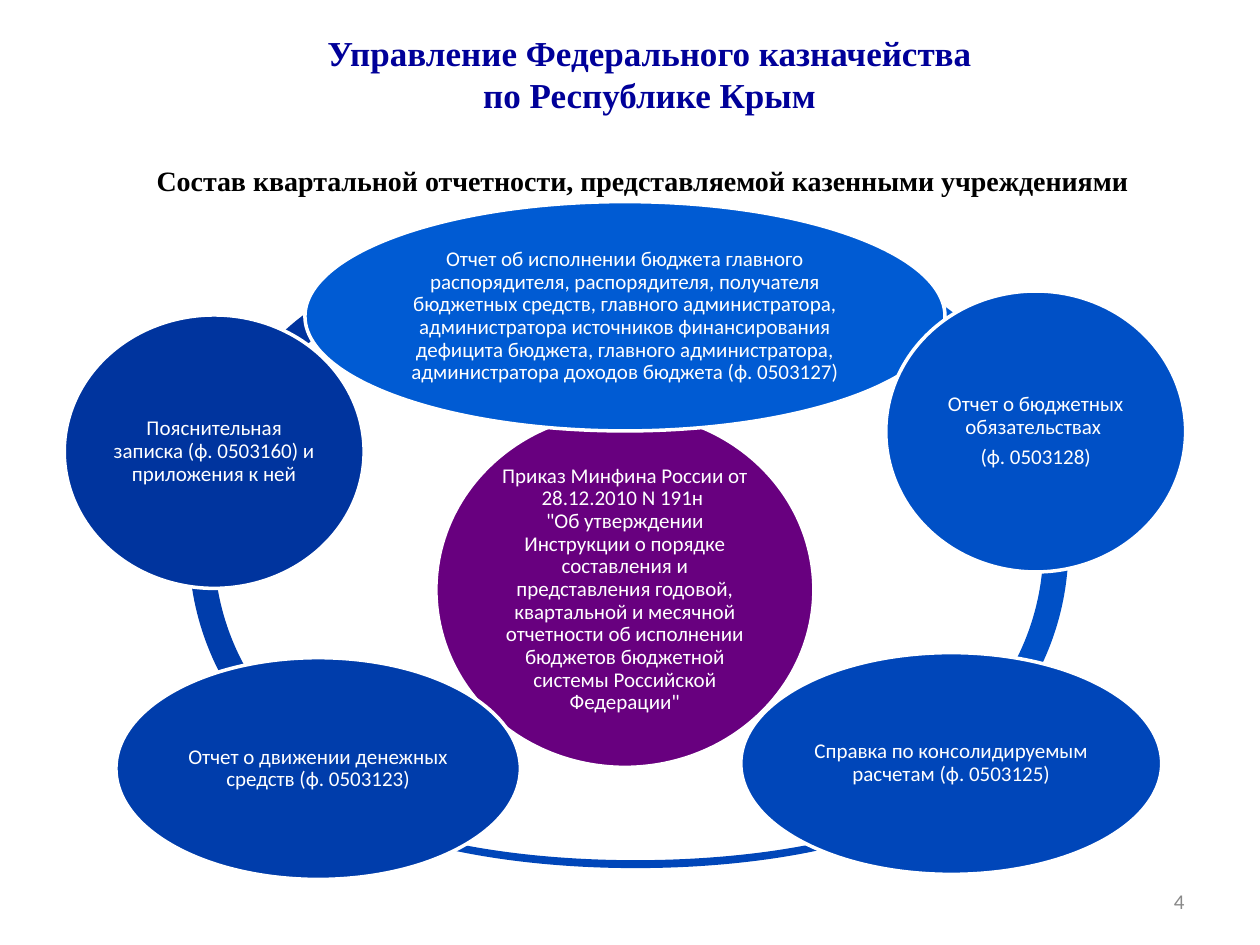
from pptx import Presentation
from pptx.dml.color import RGBColor
from pptx.enum.shapes import MSO_SHAPE as Shape
from pptx.enum.text import MSO_ANCHOR as Anchor, PP_ALIGN as Align
from pptx.util import Inches, Pt

SERIF = {"name": "Times New Roman", "bold": True}
SANS = {"name": "Calibri", "size": Pt(12)}
NODE = {"alignment": Align.CENTER, "line_spacing": 0.9, "space_after": Pt(4.2)}
SIDES = ("margin_left", "margin_top", "margin_right", "margin_bottom")


def rgb(code):
    return RGBColor.from_string(code)


def assign(item, values):
    for key, value in values.items():
        setattr(item, key, value)


class Board:
    def __init__(self, slide):
        self.slide = slide

    def fill_text(self, frame, lines, color, font, para):
        for i, line in enumerate(lines):
            p = frame.add_paragraph() if i else frame.paragraphs[0]
            p.text = line
            assign(p, para)
            for run in p.runs:
                assign(run.font, font)
                run.font.color.rgb = rgb(color)

    def text(self, box, lines, color, font, align=Align.CENTER, **frame):
        area = self.slide.shapes.add_textbox(*map(Inches, box)).text_frame
        assign(area, {"word_wrap": True, **frame})
        self.fill_text(area, lines, color, font, {"alignment": align})

    def shape(self, kind, box, fill):
        item = self.slide.shapes.add_shape(kind, *map(Inches, box))
        item.shadow.inherit = False
        item.fill.solid()
        item.fill.fore_color.rgb = rgb(fill)
        item.line.fill.background()
        return item

    def arc(self, box, fill, start, end, depth):
        item = self.shape(Shape.BLOCK_ARC, box, fill)
        for i, value in enumerate((start, end, depth)):
            item.adjustments[i] = value

    def oval(self, box, fill, *lines):
        item = self.shape(Shape.OVAL, box, fill)
        item.line.color.rgb = rgb("FFFFFF")
        item.line.width = Pt(2)
        frame = item.text_frame
        assign(frame, {"word_wrap": True, "vertical_anchor": Anchor.MIDDLE})
        assign(frame, dict.fromkeys(SIDES, Inches(0.02)))
        self.fill_text(frame, lines, "FFFFFF", SANS, NODE)


# Page
deck = Presentation()
deck.slide_width, deck.slide_height = Inches(10), Inches(7.5)
board = Board(deck.slides.add_slide(deck.slide_layouts[6]))

# Headings and page number
board.text((7.17, 6.95, 2.33, 0.4), ["4"], "898989", SANS, Align.RIGHT,
           vertical_anchor=Anchor.MIDDLE)
board.text((1.77, 0.2, 6.77, 1.04),
           ["Управление Федерального казначейства", "по Республике Крым"],
           "000099", {**SERIF, "size": Pt(20)})
board.text((1.09, 1.25, 8.02, 0.37),
           ["Состав квартальной отчетности, представляемой казенными учреждениями"],
           "000000", {**SERIF, "size": Pt(16)}, word_wrap=False)

# Ring of arcs
SIZE = 4.34
ARCS = [
    ((1.55, 2.06, SIZE, SIZE), "00349E", 118.78, 183.49, 0.046),
    ((1.5, 2.17, SIZE, SIZE), "003DAB", 73.87, 120.26, 0.046),
    ((2.48, 5.28, 5.13, 1.61), "0046B9", 215.74, 107.74, 0.039),
    ((4.14, 2.17, SIZE, SIZE), "0050C6", 200.55, 32.43, 0.046),
    ((4.07, 2.03, SIZE, SIZE), "005BD3", 139.6, 203.05, 0.046),
]
for arc in ARCS:
    board.arc(*arc)

# Central order, then the reports clockwise from the top
OVALS = [
    ((3.46, 3.27, 3, 2.82), "68007F",
     "Приказ Минфина России от 28.12.2010 N 191н \v"
     "\"Об утверждении Инструкции о порядке составления и представления "
     "годовой, квартальной и месячной отчетности об исполнении бюджетов "
     "бюджетной системы Российской Федерации\""),
    ((2.42, 1.6, 5.08, 1.82), "005BD3",
     "Отчет об исполнении бюджета главного распорядителя, распорядителя, "
     "получателя бюджетных средств, главного администратора, администратора "
     "источников финансирования дефицита бюджета, главного администратора, "
     "администратора доходов бюджета (ф. 0503127)"),
    ((7.03, 2.31, 2.38, 2.23), "0050C6",
     "Отчет о бюджетных обязательствах ", "(ф. 0503128)"),
    ((5.88, 5.18, 3.34, 1.76), "0046B9",
     "Справка по консолидируемым расчетам (ф. 0503125)"),
    ((0.92, 5.22, 3.21, 1.76), "003DAB",
     "Отчет о движении денежных средств (ф. 0503123)"),
    ((0.51, 2.5, 2.38, 2.17), "00349E",
     "Пояснительная записка (ф. 0503160) и приложения к ней"),
]
for oval in OVALS:
    board.oval(*oval)

deck.save("out.pptx")
